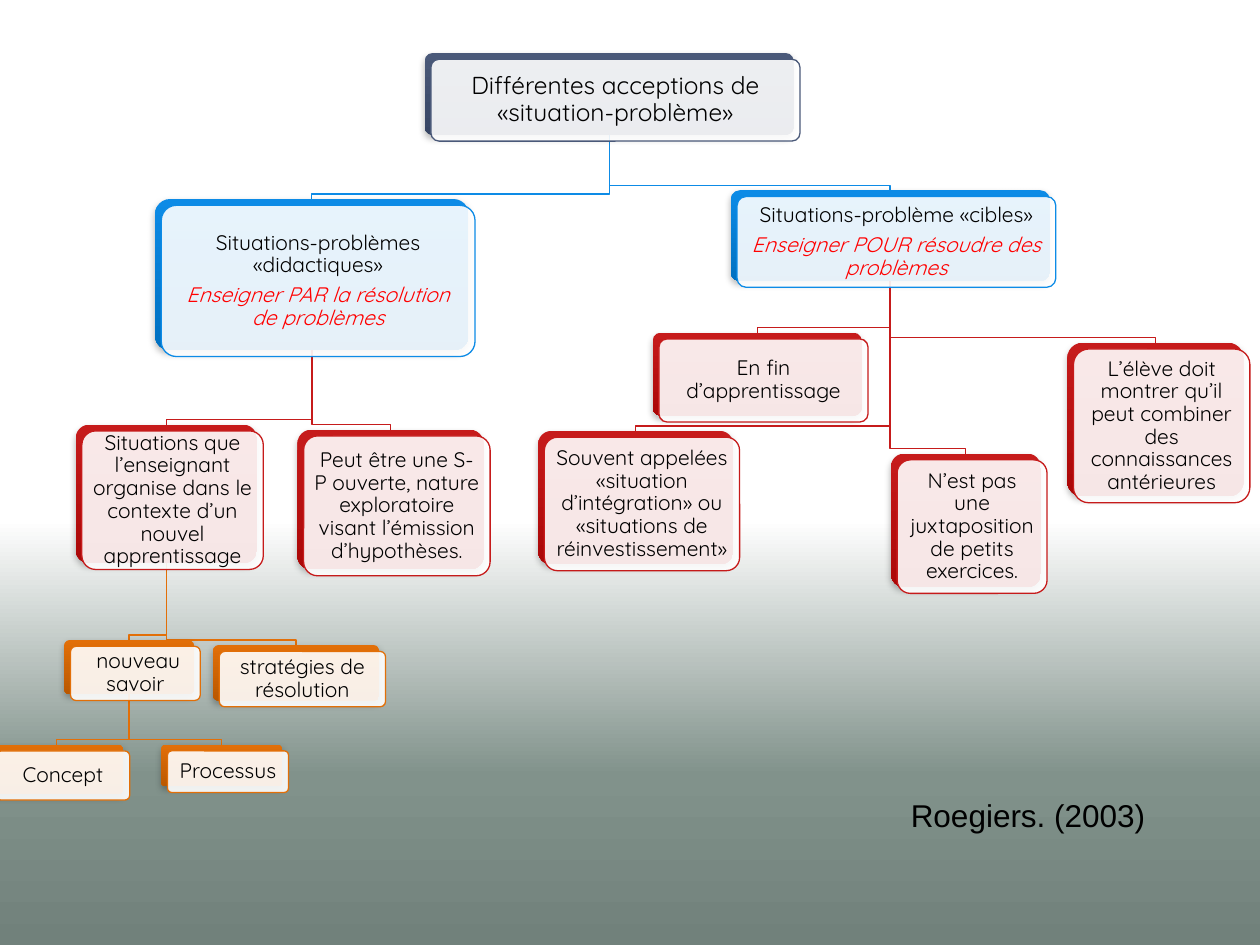
from copy import deepcopy
from dataclasses import dataclass
from typing import Optional

from lxml import etree
from pptx import Presentation
from pptx.dml.color import RGBColor
from pptx.enum.shapes import MSO_SHAPE
from pptx.enum.text import MSO_ANCHOR, MSO_AUTO_SIZE, PP_ALIGN
from pptx.oxml.ns import qn
from pptx.util import Inches, Pt

ROUNDED = MSO_SHAPE.ROUNDED_RECTANGLE
MIDDLE = MSO_ANCHOR.MIDDLE
CENTER = PP_ALIGN.CENTER

BLACK = RGBColor(0x00, 0x00, 0x00)
WHITE = RGBColor(0xFF, 0xFF, 0xFF)
ACCENT_RED = RGBColor(0xFF, 0x00, 0x00)
# Each level has a light and a dark tone
SLATE = (RGBColor(0x4A, 0x59, 0x79), RGBColor(0x37, 0x45, 0x64))
BLUE = (RGBColor(0x0D, 0x8B, 0xE6), RGBColor(0x00, 0x70, 0xC1))
RED = (RGBColor(0xC6, 0x1B, 0x1B), RGBColor(0xAB, 0x08, 0x08))
ORANGE = (RGBColor(0xE2, 0x6F, 0x08), RGBColor(0xBA, 0x58, 0x00))
BACKGROUND = [
    (0.55, WHITE),
    (0.82, RGBColor(0x81, 0x92, 0x8B)),
    (1.0, RGBColor(0x71, 0x81, 0x7B)),
]

CARD_OFFSET = 0.05  # front card relative to the coloured back card
ELBOW_GAP = 0.04  # height of a link's last vertical piece
DOWNWARD = 270


@dataclass
class Node:
    left: float
    top: float
    width: float
    height: float
    tones: tuple
    text: str
    parent: Optional["Node"] = None
    accent: str = ""
    size: int = 12

    @property
    def center(self) -> float:
        return self.left + self.width / 2


# Concept tree
root = Node(3.37, 0.42, 2.93, 0.65, SLATE,
            "Différentes acceptions de «situation-problème»", size=14)
didactic = Node(1.23, 1.58, 2.49, 1.2, BLUE, "Situations-problèmes «didactiques»", root,
                accent="Enseigner PAR la résolution de problèmes")
learning = Node(0.6, 3.37, 1.44, 1.1, RED,
                "Situations que l’enseignant organise dans le contexte d’un nouvel apprentissage",
                didactic)
knowledge = Node(0.51, 5.08, 1.03, 0.43, ORANGE, " nouveau savoir", learning)
target = Node(5.8, 1.51, 2.53, 0.72, BLUE, "Situations-problème «cibles»", root,
              accent="Enseigner POUR résoudre des problèmes")
nodes = [
    root,
    didactic,
    learning,
    knowledge,
    Node(-0.08, 5.91, 1.06, 0.39, ORANGE, "Concept", knowledge),
    Node(1.28, 5.91, 0.96, 0.33, ORANGE, "Processus", knowledge),
    Node(1.69, 5.12, 1.32, 0.44, ORANGE, "stratégies de résolution", learning),
    Node(2.36, 3.41, 1.48, 1.11, RED,
         "Peut être une S-P ouverte, nature exploratoire visant l’émission d’hypothèses.",
         didactic),
    target,
    Node(4.27, 3.42, 1.55, 1.06, RED,
         "Souvent appelées «situation d’intégration» ou «situations de réinvestissement»",
         target),
    Node(5.18, 2.64, 1.66, 0.66, RED, "En fin d’apprentissage", target),
    Node(7.07, 3.6, 1.19, 1.06, RED,
         "N’est pas une juxtaposition de petits exercices.", target),
    Node(8.47, 2.72, 1.4, 1.22, RED,
         "L’élève doit montrer qu’il peut combiner des connaissances antérieures", target),
]


def set_gradient(fill, colors) -> None:
    fill.gradient()
    fill.gradient_angle = DOWNWARD
    for stop, color in zip(fill.gradient_stops, colors):
        stop.color.rgb = color


def paint_background(slide) -> None:
    fill = slide.background.fill
    set_gradient(fill, [color for _, color in BACKGROUND[:2]])
    stops = slide.element.find(".//" + qn("a:gsLst"))
    stops.append(deepcopy(stops[-1]))
    for stop, (position, color) in zip(fill.gradient_stops, BACKGROUND):
        stop.position = position
        stop.color.rgb = color


def add_soft_shadow(shape) -> None:
    shape.shadow.inherit = False
    effects = shape.element.spPr.find(qn("a:effectLst"))
    shadow = etree.SubElement(effects, qn("a:outerShdw"), blurRad=str(Pt(4)),
                              dist=str(Pt(2)), dir="5400000", rotWithShape="0")
    color = etree.SubElement(shadow, qn("a:srgbClr"), val=str(BLACK))
    etree.SubElement(color, qn("a:alpha"), val="28000")


def write(para, text: str, *, font: str = "Quicksand", size: int = 12,
          color: RGBColor = BLACK, italic: bool = False) -> None:
    span = para.add_run()
    span.text = text
    span.font.name = font
    span.font.size = Pt(size)
    span.font.color.rgb = color
    span.font.italic = italic


def add_rounded(slide, node: Node, offset: float = 0):
    shape = slide.shapes.add_shape(ROUNDED, Inches(node.left + offset), Inches(node.top + offset),
                                   Inches(node.width), Inches(node.height))
    shape.adjustments[0] = 0.1
    return shape


def draw_link(slide, parent: Node, child: Node) -> None:
    elbow = child.top - ELBOW_GAP
    start = (parent.center, parent.top + parent.height)
    corners = [(parent.center, elbow), (child.center, elbow), (child.center, child.top)]
    builder = slide.shapes.build_freeform(*map(Inches, start))
    builder.add_line_segments([(Inches(x), Inches(y)) for x, y in corners], close=False)
    link = builder.convert_to_shape()
    link.shadow.inherit = False
    link.fill.background()
    link.line.color.rgb = child.tones[0]
    link.line.width = Pt(0.75)


def draw_card(slide, node: Node) -> None:
    # Coloured back card
    back = add_rounded(slide, node)
    set_gradient(back.fill, node.tones)
    for stop, position in zip(back.fill.gradient_stops, (0, 1)):
        stop.position = position
    back.line.fill.background()
    add_soft_shadow(back)

    # Translucent front card
    front = add_rounded(slide, node, CARD_OFFSET)
    front.shadow.inherit = False
    front.fill.solid()
    front.fill.fore_color.rgb = WHITE
    white = front.element.spPr.find(qn("a:solidFill")).find(qn("a:srgbClr"))
    etree.SubElement(white, qn("a:alpha"), val="90000")
    front.line.color.rgb = node.tones[0]
    front.line.width = Pt(0.75)

    # Wording
    frame = front.text_frame
    frame.word_wrap = True
    frame.vertical_anchor = MIDDLE
    frame.margin_left = frame.margin_right = Inches(0.05)
    frame.margin_top = frame.margin_bottom = Inches(0.05)
    write(frame.paragraphs[0], node.text, size=node.size)
    if node.accent:
        write(frame.add_paragraph(), node.accent, color=ACCENT_RED, italic=True)
    for para in frame.paragraphs:
        para.alignment = CENTER
        para.line_spacing = 0.9
        para.space_after = Pt(0.35 * node.size)


def main() -> None:
    deck = Presentation()
    deck.slide_width, deck.slide_height = Inches(10), Inches(7.5)
    page = deck.slides.add_slide(deck.slide_layouts[6])
    paint_background(page)

    # Links lie behind the cards
    for node in nodes:
        if node.parent:
            draw_link(page, node.parent, node)
    for node in nodes:
        draw_card(page, node)

    # Citation
    box = page.shapes.add_textbox(Inches(7.13), Inches(6.27), Inches(2.08), Inches(0.4))
    box.text_frame.word_wrap = False
    box.text_frame.auto_size = MSO_AUTO_SIZE.SHAPE_TO_FIT_TEXT
    write(box.text_frame.paragraphs[0], "Roegiers. (2003)", font="Arial", size=18)

    deck.save("out.pptx")


if __name__ == "__main__":
    main()
